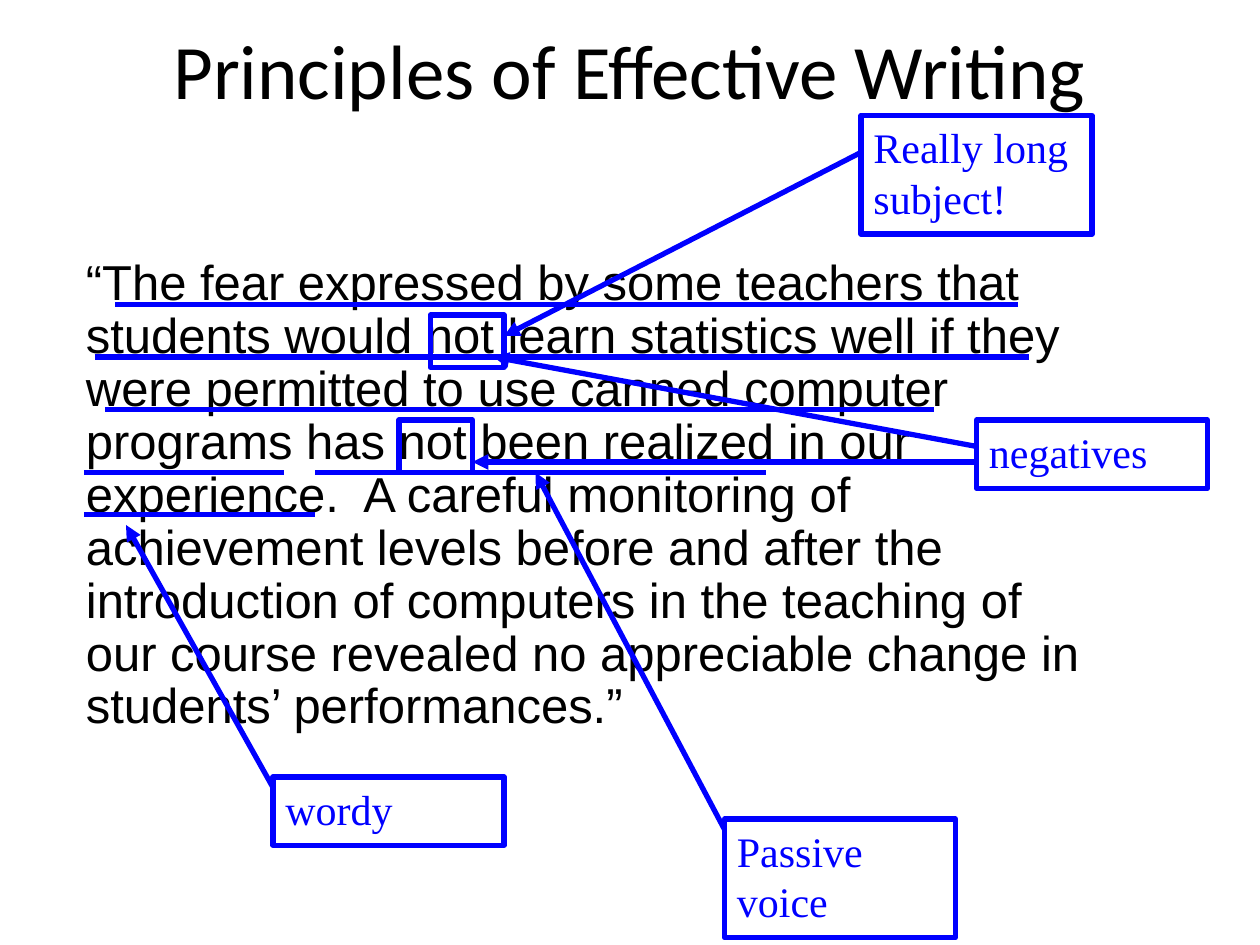
"""Build the slide on effective writing, with an annotated example sentence."""
from lxml import etree
from pptx import Presentation
from pptx.dml.color import RGBColor
from pptx.enum.shapes import MSO_CONNECTOR, MSO_SHAPE
from pptx.enum.text import MSO_ANCHOR, PP_ALIGN
from pptx.oxml.ns import qn
from pptx.util import Inches, Pt

RECTANGLE = MSO_SHAPE.RECTANGLE
STRAIGHT = MSO_CONNECTOR.STRAIGHT
TOP, MIDDLE = MSO_ANCHOR.TOP, MSO_ANCHOR.MIDDLE
LEFT, CENTER = PP_ALIGN.LEFT, PP_ALIGN.CENTER

COLORS = {"ink": "000000", "mark": "0000FF", "paper": "FFFFFF"}
CELLS_PER_INCH = 12
LINE_WIDTH = Pt(3)
FRAME_SIZE = (7, 5)
LABEL_WIDTH = 22

FORMATS = {
    "title": {
        "font": {"name": "Calibri", "size": Pt(44)}, "color": "ink",
        "paragraph": {"alignment": CENTER},
        "frame": {"word_wrap": True, "vertical_anchor": MIDDLE},
    },
    "body": {
        "font": {"name": "Arial", "size": Pt(28)}, "color": "ink",
        "paragraph": {"alignment": LEFT, "line_spacing": 0.9},
        "frame": {"word_wrap": True, "vertical_anchor": TOP},
    },
    "label": {
        "font": {"name": "Times New Roman", "size": Pt(24)}, "color": "mark",
        "paragraph": {"alignment": LEFT},
        "frame": {"word_wrap": True, "vertical_anchor": TOP},
    },
}

TITLE = "Principles of Effective Writing"
QUOTE = (
    "“The fear expressed by some teachers that students would not learn "
    "statistics well if they were permitted to use canned computer programs "
    "has not been realized in our experience.  A careful monitoring of "
    "achievement levels before and after the introduction of computers in the "
    "teaching of our course revealed no appreciable change in students’ "
    "performances.”"
)

ANNOTATIONS = [
    {
        "underlines": [(11, 97, 29), (9, 98, 34), (10, 89, 39), (8, 27, 45)],
        "frames": [],
        "arrows": [((83, 14), (48, 32))],
        "label": ("Really long subject!", 82, 11, 11.3),
    },
    {
        "underlines": [],
        "frames": [(41, 30), (38, 40)],
        "arrows": [((101, 44), (47, 34)), ((101, 44), (45, 44))],
        "label": ("negatives", 93, 40, 6.5),
    },
    {
        "underlines": [(30, 73, 45)],
        "frames": [],
        "arrows": [((69, 79), (51, 45))],
        "label": ("Passive voice", 69, 78, 11.3),
    },
    {
        "underlines": [(8, 30, 49), (76, 87, 44)],
        "frames": [],
        "arrows": [((26, 75), (12, 50))],
        "label": ("wordy", 26, 74, 6.5),
    },
]


def grid(*cells):
    """Turn counts of grid cells into lengths."""
    return [Inches(cell / CELLS_PER_INCH) for cell in cells]


def color(name):
    """Look up a named colour."""
    return RGBColor.from_string(COLORS[name])


def apply(target, values):
    """Set each named attribute on the target."""
    for name, value in values.items():
        setattr(target, name, value)


def write(shape, text, style):
    """Put one formatted paragraph into a shape."""
    values = FORMATS[style]
    apply(shape.text_frame, values["frame"])
    paragraph = shape.text_frame.paragraphs[0]
    apply(paragraph, values["paragraph"])
    run = paragraph.add_run()
    run.text = text
    apply(run.font, values["font"])
    run.font.color.rgb = color(values["color"])


def add_text(slide, box, text, style):
    """Add a text box."""
    write(slide.shapes.add_textbox(*grid(*box)), text, style)


def draw_outline(line):
    """Give a line the marking colour and width."""
    line.color.rgb = color("mark")
    line.width = LINE_WIDTH


def add_line(group, start, end, arrow=False):
    """Add a straight line, with an arrowhead at its end if asked."""
    connector = group.shapes.add_connector(STRAIGHT, *grid(*start, *end))
    draw_outline(connector.line)
    properties = connector._element.spPr
    if arrow:
        outline = properties.find(qn("a:ln"))
        etree.SubElement(outline, qn("a:tailEnd"), type="triangle")
    etree.SubElement(properties, qn("a:effectLst"))


def add_frame(group, box):
    """Add an unfilled rectangle with a marking outline."""
    shape = group.shapes.add_shape(RECTANGLE, *grid(*box))
    shape.shadow.inherit = False
    shape.fill.background()
    draw_outline(shape.line)
    return shape


def add_label(group, text, column, row, height):
    """Add a filled rectangle that names a fault."""
    shape = add_frame(group, (column, row, LABEL_WIDTH, height))
    shape.fill.solid()
    shape.fill.fore_color.rgb = color("paper")
    write(shape, text, "label")


def add_annotation(slide, annotation):
    """Add a group of underlines, frames, arrows and their label."""
    group = slide.shapes.add_group_shape()
    for left, right, row in annotation["underlines"]:
        add_line(group, (left, row), (right, row))
    for corner in annotation["frames"]:
        add_frame(group, corner + FRAME_SIZE)
    for start, end in annotation["arrows"]:
        add_line(group, start, end, arrow=True)
    add_label(group, *annotation["label"])


def main():
    """Build and save the slide."""
    presentation = Presentation()
    apply(presentation, {"slide_width": Inches(10), "slide_height": Inches(7.5)})
    slide = presentation.slides.add_slide(presentation.slide_layouts[6])
    add_text(slide, (6, -1, 108, 15), TITLE, "title")
    add_text(slide, (7, 24, 99, 53), QUOTE, "body")
    for annotation in ANNOTATIONS:
        add_annotation(slide, annotation)
    presentation.save("out.pptx")


if __name__ == "__main__":
    main()
